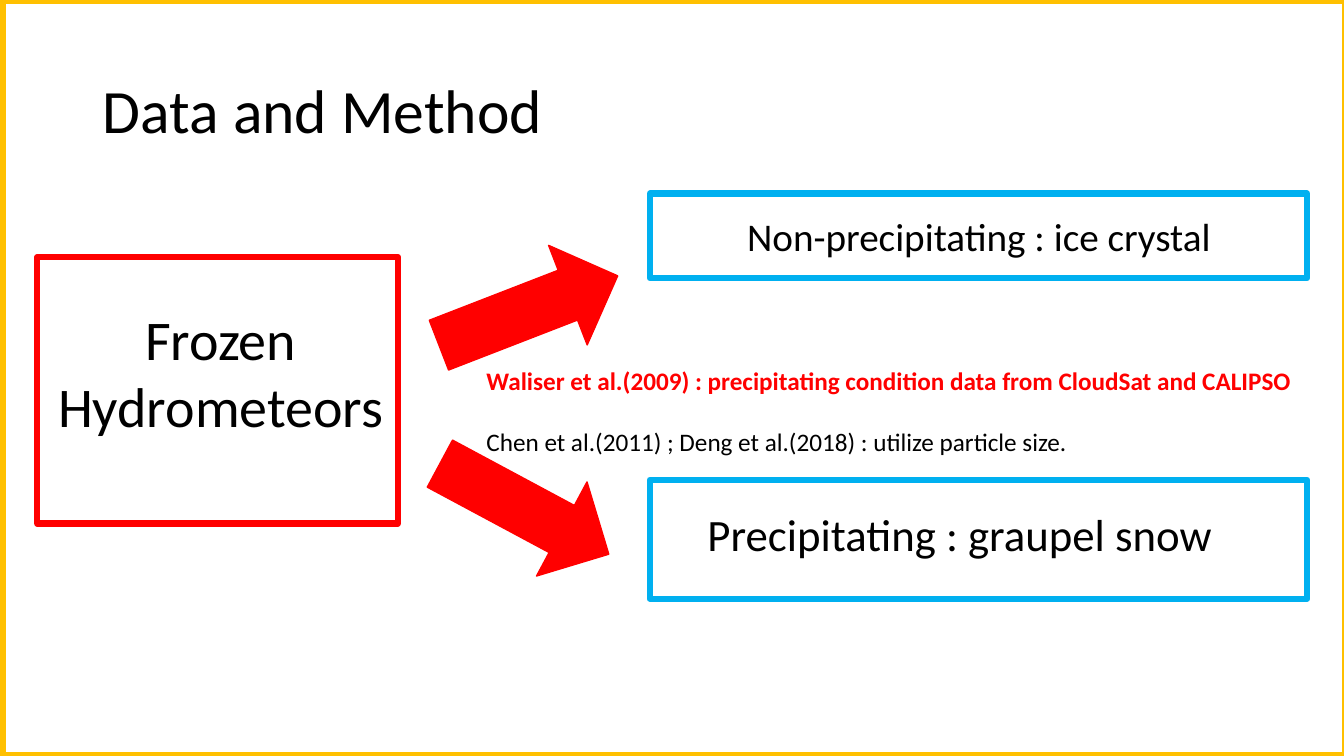
"""Build the Data and Method slide on frozen hydrometeors."""
from dataclasses import dataclass
from typing import Optional

from pptx import Presentation
from pptx.dml.color import RGBColor
from pptx.enum.shapes import MSO_SHAPE
from pptx.enum.text import MSO_ANCHOR, MSO_AUTO_SIZE, PP_ALIGN
from pptx.util import Cm, Pt


@dataclass(frozen=True)
class Theme:
    font: str = "Calibri"
    black: RGBColor = RGBColor(0, 0, 0)
    red: RGBColor = RGBColor(0xFF, 0, 0)
    blue: RGBColor = RGBColor(0, 0xB0, 0xF0)
    gold: RGBColor = RGBColor(0xFF, 0xC0, 0)
    title: int = 44
    source: int = 40
    precipitating: int = 32
    suspended: int = 28
    citation: int = 18
    frame_line: float = 6
    box_line: float = 4.5
    arrow_line: float = 1


@dataclass(frozen=True)
class Area:
    left: float
    top: float
    width: float
    height: float


@dataclass(frozen=True)
class Figure:
    area: Area
    color: RGBColor
    line: float
    kind: MSO_SHAPE = MSO_SHAPE.RECTANGLE
    filled: bool = False
    rotation: float = 0


@dataclass(frozen=True)
class Line:
    text: str
    color: RGBColor
    bold: bool = False


@dataclass(frozen=True)
class Label:
    area: Area
    lines: tuple[Line, ...]
    size: int
    align: PP_ALIGN = PP_ALIGN.LEFT
    wrap: bool = True
    gap: float = 0


THEME = Theme()
ARROW_W, ARROW_H = 4.83, 2.69
BOX_LEFT, BOX_W = 16.38, 16.56

FIGURES = (
    Figure(Area(0.05, 0, 33.87, 19.05), THEME.gold, THEME.frame_line),
    Figure(Area(0.94, 6.48, 9.09, 6.71), THEME.red, THEME.box_line),
    Figure(Area(10.9, 6.48, ARROW_W, ARROW_H), THEME.red, THEME.arrow_line,
           MSO_SHAPE.RIGHT_ARROW, True, 338.8),
    Figure(Area(10.8, 11.48, ARROW_W, ARROW_H), THEME.red, THEME.arrow_line,
           MSO_SHAPE.RIGHT_ARROW, True, 28.2),
    Figure(Area(BOX_LEFT, 4.88, BOX_W, 2.13), THEME.blue, THEME.box_line),
    Figure(Area(BOX_LEFT, 12.09, BOX_W, 3), THEME.blue, THEME.box_line),
)

LABELS = (
    Label(Area(0.2, 7.54, 10.72, 5.38),
          (Line("Frozen", THEME.black), Line("Hydrometeors", THEME.black)),
          THEME.source, PP_ALIGN.CENTER),
    Label(Area(17.58, 12.65, 15.88, 3),
          (Line("Precipitating : graupel snow", THEME.black),),
          THEME.precipitating),
    Label(Area(16.2, 5.23, 16.94, 1.45),
          (Line("Non-precipitating : ice crystal", THEME.black),),
          THEME.suspended, PP_ALIGN.CENTER),
    Label(Area(12.01, 9.07, 20.98, 3.33),
          (Line("Waliser et al.(2009) : precipitating condition data from "
                "CloudSat and CALIPSO", THEME.red, True),
           Line("Chen et al.(2011) ; Deng et al.(2018) : utilize particle size.",
                THEME.black)),
          THEME.citation, wrap=False, gap=22),
)


def add_run(p, line: Line, size: int) -> None:
    r = p.add_run()
    r.text = line.text
    r.font.name = THEME.font
    r.font.size = Pt(size)
    r.font.bold = line.bold
    r.font.color.rgb = line.color


def draw_title(slide, text: str, area: Area) -> None:
    sp = slide.shapes.title
    sp.left, sp.top = Cm(area.left), Cm(area.top)
    sp.width, sp.height = Cm(area.width), Cm(area.height)
    tf = sp.text_frame
    tf.auto_size = MSO_AUTO_SIZE.NONE
    tf.vertical_anchor = MSO_ANCHOR.MIDDLE
    p = tf.paragraphs[0]
    p.alignment = PP_ALIGN.LEFT
    p.line_spacing = 0.9
    add_run(p, Line(text, THEME.black), THEME.title)


def draw_figure(slide, fig: Figure) -> None:
    a = fig.area
    sp = slide.shapes.add_shape(
        fig.kind, Cm(a.left), Cm(a.top), Cm(a.width), Cm(a.height))
    sp.shadow.inherit = False
    sp.rotation = fig.rotation
    sp.line.color.rgb = fig.color
    sp.line.width = Pt(fig.line)
    if fig.filled:
        sp.fill.solid()
        sp.fill.fore_color.rgb = fig.color
    else:
        sp.fill.background()


def draw_label(slide, label: Label) -> None:
    a = label.area
    tf = slide.shapes.add_textbox(
        Cm(a.left), Cm(a.top), Cm(a.width), Cm(a.height)).text_frame
    tf.word_wrap = label.wrap
    for i, line in enumerate(label.lines):
        p = tf.add_paragraph() if i else tf.paragraphs[0]
        p.alignment = label.align
        if i:
            p.space_before = Pt(label.gap)
        add_run(p, line, label.size)


def main() -> None:
    prs = Presentation()
    prs.slide_width, prs.slide_height = Cm(33.87), Cm(19.05)
    slide = prs.slides.add_slide(prs.slide_layouts.get_by_name("Title Only"))
    draw_title(slide, "Data and Method", Area(2.34, 1.02, 29.21, 3.68))
    for fig in FIGURES:
        draw_figure(slide, fig)
    for label in LABELS:
        draw_label(slide, label)
    prs.save("out.pptx")


if __name__ == "__main__":
    main()
